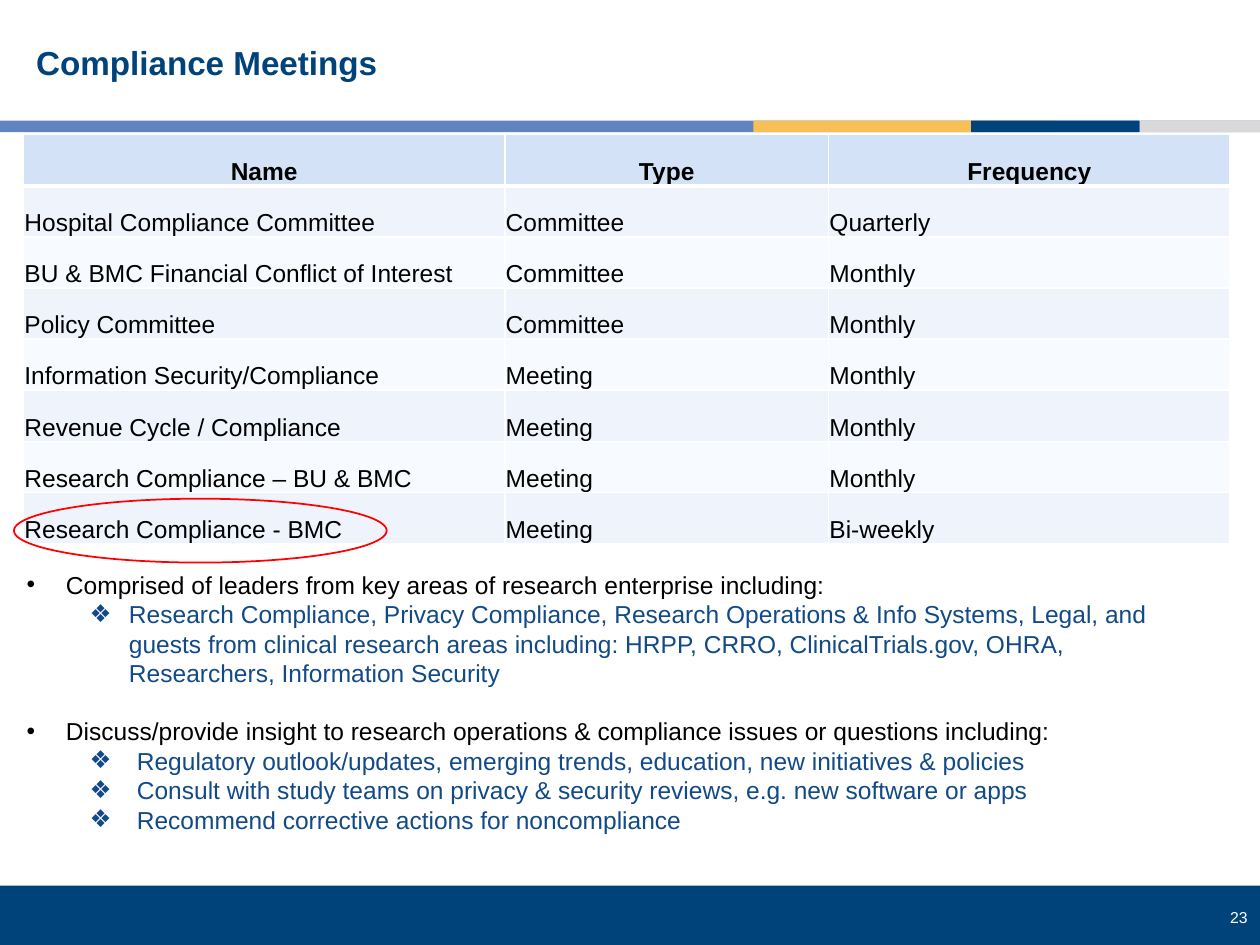
from lxml import etree
from pptx import Presentation
from pptx.dml.color import RGBColor
from pptx.enum import shapes, text
from pptx.oxml import ns
from pptx.util import Pt

# Content
TITLE = "Compliance Meetings"
PAGE = "23"
MEETINGS = [
    ("Name", "Type", "Frequency"),
    ("Hospital Compliance Committee", "Committee", "Quarterly"),
    ("BU & BMC Financial Conflict of Interest", "Committee", "Monthly"),
    ("Policy Committee", "Committee", "Monthly"),
    ("Information Security/Compliance", "Meeting", "Monthly"),
    ("Revenue Cycle / Compliance", "Meeting", "Monthly"),
    ("Research Compliance – BU & BMC", "Meeting", "Monthly"),
    ("Research Compliance - BMC", "Meeting", "Bi-weekly"),
]
# Each topic: heading, indent and hanging of its points, points
TOPICS = [
    ("Comprised of leaders from key areas of research enterprise including:", 58.5, 22.5, [
        "Research Compliance, Privacy Compliance, Research Operations & Info Systems, Legal, "
        "and guests from clinical research areas including: HRPP, CRRO, ClinicalTrials.gov, "
        "OHRA, Researchers, Information Security"]),
    ("Discuss/provide insight to research operations & compliance issues or questions including:",
     63, 27, [
        "Regulatory outlook/updates, emerging trends, education, new initiatives & policies",
        "Consult with study teams on privacy & security reviews, e.g. new software or apps",
        "Recommend corrective actions for noncompliance"]),
]
NAVY, BLUE, BLACK, WHITE = "00437B", "114A87", "000000", "FFFFFF"
# Stripe pieces: left, width, colour
STRIPES = [(0, 720, "6283C2"), (430.5, 173, "F8BF56"), (555, 96, NAVY), (651.5, 68.5, "D9D9D9")]
COLUMNS = [275, 185, 229.5]
ROW_HEIGHT = 29.2


def rgb(value):
    return RGBColor.from_string(value)


def place(s, left, top, width, height):
    s.left, s.top, s.width, s.height = Pt(left), Pt(top), Pt(width), Pt(height)


def add_run(p, words, size, color, bold=False):
    r = p.add_run()
    r.text = words
    r.font.name, r.font.size, r.font.bold = "Arial", Pt(size), bold
    r.font.color.rgb = rgb(color)


def add_rect(left, top, width, height, color):
    s = slide.shapes.add_shape(shapes.MSO_SHAPE.RECTANGLE, Pt(left), Pt(top), Pt(width), Pt(height))
    s.shadow.inherit = False
    s.fill.solid()
    s.fill.fore_color.rgb = rgb(color)
    s.line.fill.background()


def add_bullet(p, char, left, hanging):
    ppr = p._p.get_or_add_pPr()
    ppr.set("marL", str(Pt(left)))
    ppr.set("indent", str(-Pt(hanging)))
    etree.SubElement(ppr, ns.qn("a:buFont")).set("typeface", "Arial")
    etree.SubElement(ppr, ns.qn("a:buChar")).set("char", char)


def set_borders(cell, top, bottom):
    tcpr = cell._tc.get_or_add_tcPr()
    for tag, width in (("lnL", 1), ("lnR", 1), ("lnT", top), ("lnB", bottom)):
        ln = etree.SubElement(tcpr, ns.qn("a:" + tag), w=str(Pt(width)))
        fill = etree.SubElement(ln, ns.qn("a:solidFill"))
        etree.SubElement(fill, ns.qn("a:srgbClr"), val=WHITE)


prs = Presentation()
prs.slide_width, prs.slide_height = Pt(720), Pt(540)
slide = prs.slides.add_slide(prs.slide_layouts[1])
title, body = slide.placeholders

# Title
place(title, 13.5, 12, 689, 50)
tf = title.text_frame
tf.auto_size = text.MSO_AUTO_SIZE.NONE
tf.vertical_anchor = text.MSO_ANCHOR.MIDDLE
p = tf.paragraphs[0]
p.alignment, p.line_spacing = text.PP_ALIGN.LEFT, 0.9
add_run(p, TITLE, 19, NAVY, True)

# Stripe and footer
for left, width, color in STRIPES:
    add_rect(left, 69, width, 6.5, color)
add_rect(0, 506, 720, 34, NAVY)
number = slide.shapes.add_textbox(Pt(670.5), Pt(515), Pt(49.5), Pt(18))
number.text_frame.word_wrap = True
p = number.text_frame.paragraphs[0]
p.alignment = text.PP_ALIGN.RIGHT
add_run(p, PAGE, 9, WHITE)

# Meetings table
table = slide.shapes.add_table(len(MEETINGS), len(COLUMNS), Pt(13.5), Pt(77), Pt(sum(COLUMNS)),
                               Pt(ROW_HEIGHT * len(MEETINGS))).table
for column, width in zip(table.columns, COLUMNS):
    column.width = Pt(width)
for i, row in enumerate(MEETINGS):
    table.rows[i].height = Pt(ROW_HEIGHT)
    header = i == 0
    for j, words in enumerate(row):
        cell = table.cell(i, j)
        cell.margin_left = cell.margin_right = cell.margin_top = Pt(0.5)
        cell.margin_bottom = Pt(0)
        cell.vertical_anchor = text.MSO_ANCHOR.BOTTOM
        set_borders(cell, 3 if i == 1 else 1, 3 if header else 1)
        cell.fill.solid()
        cell.fill.fore_color.rgb = rgb("D4E2F8" if header else "EFF4FC" if i % 2 else "F7FAFE")
        p = cell.text_frame.paragraphs[0]
        p.alignment = text.PP_ALIGN.CENTER if header else text.PP_ALIGN.LEFT
        add_run(p, words, 14, BLACK, header)

# Topics of the circled meeting
place(body, 8, 322, 695, 177)
tf = body.text_frame
tf.auto_size = text.MSO_AUTO_SIZE.NONE
p = tf.paragraphs[0]
for i, (heading, left, hanging, points) in enumerate(TOPICS):
    if i:
        p = tf.add_paragraph()
    p.space_before = Pt(16.5 if i else 0)
    add_bullet(p, "•", 22.5, 22.5)
    add_run(p, heading, 14, BLACK)
    for point in points:
        p = tf.add_paragraph()
        p.level, p.space_before = 1, Pt(0)
        add_bullet(p, "❖", left, hanging)
        add_run(p, point, 14, BLUE)

# Ring around the last meeting
ring = slide.shapes.add_shape(shapes.MSO_SHAPE.OVAL, Pt(8), Pt(285), Pt(213), Pt(36.5))
ring.shadow.inherit = False
ring.fill.background()
ring.line.color.rgb = rgb("FF0000")
ring.line.width = Pt(1)

prs.save("out.pptx")
